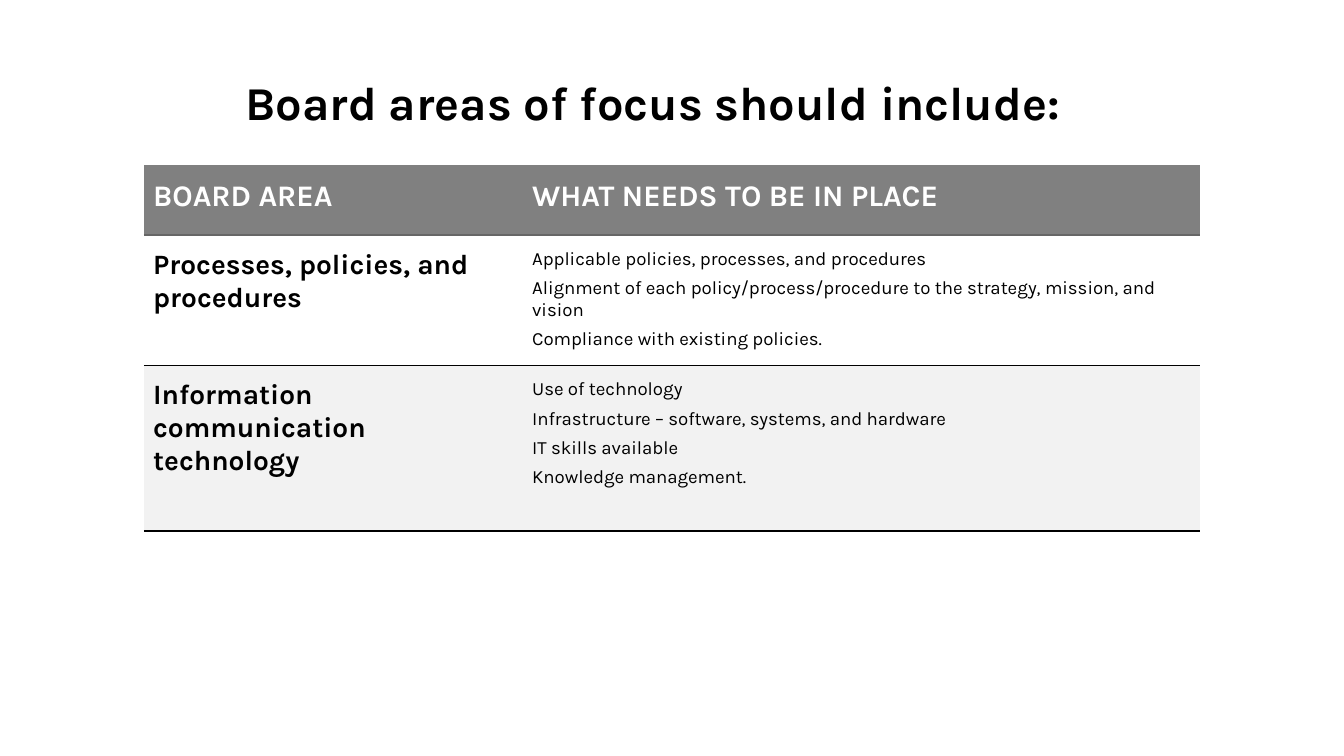
import pptx
import pptx.dml.color
import pptx.enum.text
import pptx.oxml
import pptx.oxml.ns
import pptx.util

Inches, Pt = pptx.util.Inches, pptx.util.Pt
RGBColor = pptx.dml.color.RGBColor
BLACK = RGBColor(0x00, 0x00, 0x00)
WHITE = RGBColor(0xFF, 0xFF, 0xFF)
HEADER_GRAY = RGBColor(0x80, 0x80, 0x80)
BAND_GRAY = RGBColor(0xF2, 0xF2, 0xF2)
RULE_GRAY = RGBColor(0x66, 0x66, 0x66)
FONT = "Karla"
PLAIN_STYLE = "{2D5ABB26-0587-4C30-8999-92F81FD0307C}"


def add_span(para, text, size, color, bold):
    span = para.add_run()
    span.text = text
    span.font.name = FONT
    span.font.size = Pt(size)
    span.font.bold = bold
    span.font.color.rgb = color


def add_rule(cell, side, color):
    cell._tc.get_or_add_tcPr().insert(0, pptx.oxml.parse_xml(
        f'<a:{side} {pptx.oxml.ns.nsdecls("a")} w="{Pt(1)}"><a:solidFill>'
        f'<a:srgbClr val="{color}"/></a:solidFill></a:{side}>'))


# Widescreen page, 16:9
deck = pptx.Presentation()
deck.slide_width = Inches(10)
deck.slide_height = deck.slide_width * 9 // 16
page = deck.slides.add_slide(deck.slide_layouts[5])

# Title
title = page.shapes.title
title.left, title.top = Inches(0.24), Inches(0.45)
title.width, title.height = Inches(9.32), Inches(0.62)
box = title.text_frame
box.word_wrap = True
box.auto_size = pptx.enum.text.MSO_AUTO_SIZE.NONE
box.vertical_anchor = pptx.enum.text.MSO_ANCHOR.MIDDLE
box.margin_left = box.margin_right = box.margin_top = box.margin_bottom = Inches(0.1)
box.paragraphs[0].alignment = pptx.enum.text.PP_ALIGN.CENTER
add_span(box.paragraphs[0], "Board areas of focus should include: ", 25.2, BLACK, True)

# Table content: each cell is a list of paragraphs
rows = [
    (["BOARD AREA"], ["WHAT NEEDS TO BE IN PLACE"]),
    (["Processes, policies, and procedures"],
     ["Applicable policies, processes, and procedures",
      "Alignment of each policy/process/procedure to the strategy, mission, and vision",
      "Compliance with existing policies."]),
    (["Information communication technology"],
     ["Use of technology",
      "Infrastructure – software, systems, and hardware",
      "IT skills available",
      "Knowledge management."]),
]
column_widths = [2.82, 5.04]
row_heights = [0.52, 0.97, 1.23]
row_fills = [HEADER_GRAY, None, BAND_GRAY]
rules_below = [RULE_GRAY, BLACK, BLACK]

# Table grid
frame = page.shapes.add_table(
    len(rows), len(column_widths), Inches(1.07), Inches(1.23),
    Inches(sum(column_widths)), Inches(sum(row_heights)))
table = frame.table
table._tbl.tblPr.find(pptx.oxml.ns.qn("a:tableStyleId")).text = PLAIN_STYLE
for column, width in zip(table.columns, column_widths):
    column.width = Inches(width)

# Table cells
for r, row in enumerate(rows):
    table.rows[r].height = Inches(row_heights[r])
    for c, lines in enumerate(row):
        cell = table.cell(r, c)
        cell.margin_left = cell.margin_right = Inches(0.07)
        cell.margin_top = cell.margin_bottom = Inches(0.1)
        if row_fills[r] is None:
            cell.fill.background()
        else:
            cell.fill.solid()
            cell.fill.fore_color.rgb = row_fills[r]
        add_rule(cell, "lnB", rules_below[r])
        if r > 0:
            add_rule(cell, "lnT", rules_below[r - 1])

        size = 16 if r == 0 else (15, 10)[c]
        color = WHITE if r == 0 else BLACK
        for i, line in enumerate(lines):
            para = cell.text_frame.paragraphs[0] if i == 0 else cell.text_frame.add_paragraph()
            para.space_before = Pt(4 if i else 0)
            para.space_after = Pt(4 if i == len(lines) - 1 else 0)
            add_span(para, line, size, color, r == 0 or c == 0)

deck.save("out.pptx")
